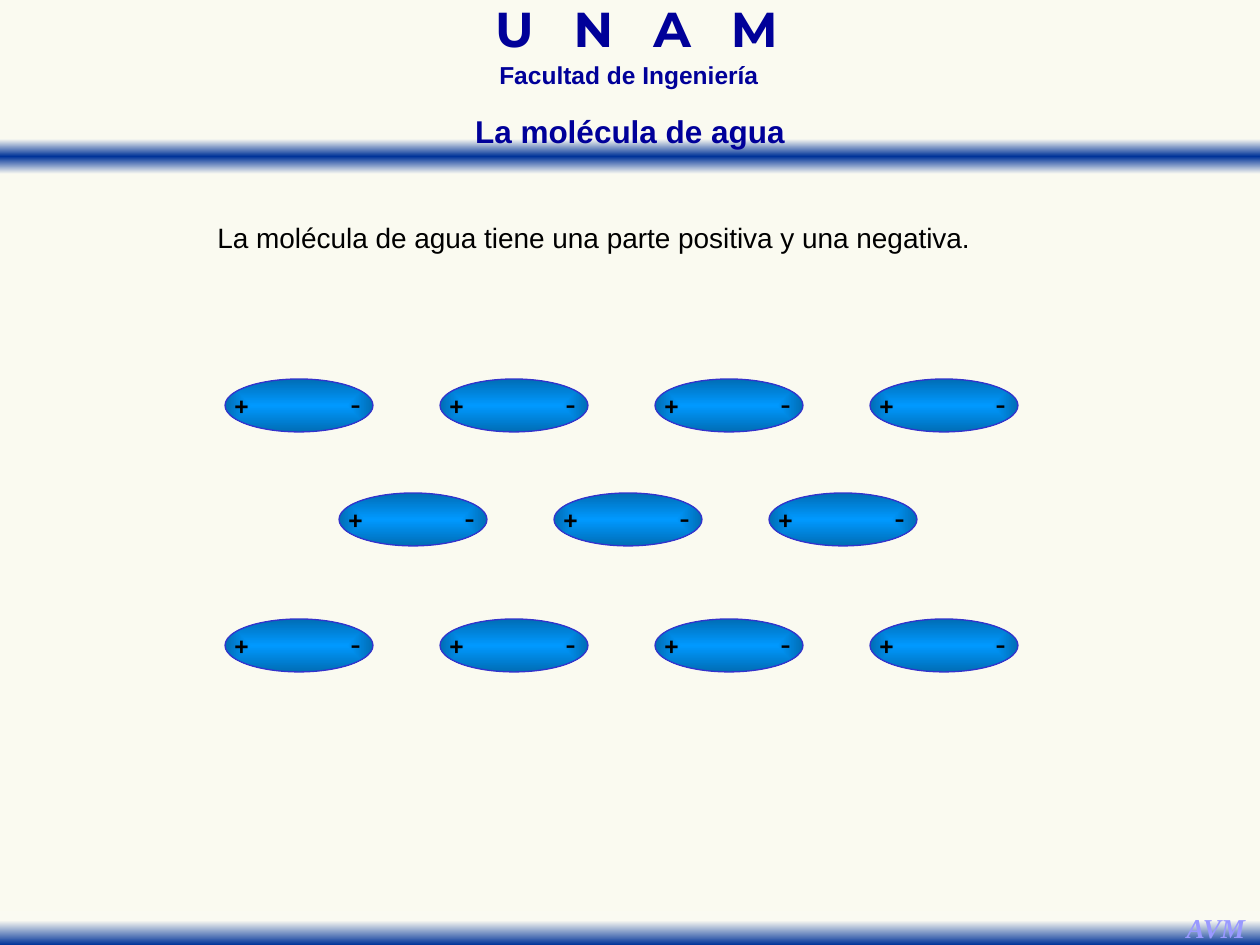
from dataclasses import dataclass
from typing import Any

from lxml import etree
from pptx import Presentation
from pptx.dml.color import RGBColor as Rgb
from pptx.enum.shapes import MSO_SHAPE as Kind
from pptx.enum.text import MSO_AUTO_SIZE as Fit, PP_ALIGN as Align
from pptx.oxml.ns import qn
from pptx.util import Emu, Pt

SCALE = 914400 / 126
CREAM, NAVY, BLUE = "FAFAF2", "000099", "003399"
LINEAR = '<a:lin ang="5400000" scaled="1"/>'
RADIAL = ('<a:path path="shape"><a:fillToRect l="50000" t="50000" '
          'r="50000" b="50000"/></a:path>')


@dataclass
class Box:
    x: int
    y: int
    w: int
    h: int


@dataclass
class Label:
    text: str
    box: Box
    size: float
    color: str = "000000"
    font: str = "Arial"
    bold: bool = False
    slant: bool = False
    wrap: bool = True
    align: Any = Align.CENTER
    lead: float = 1.0
    indent: int = 0
    track: int = 0


@dataclass
class Row:
    x: int
    y: int
    count: int


def px(n: int) -> Emu:
    return Emu(round(n * SCALE))


def place(box: Box) -> tuple:
    return px(box.x), px(box.y), px(box.w), px(box.h)


def tint(code: str) -> Rgb:
    return Rgb.from_string(code)


def blend(shape: Any, stops: list, mode: str) -> None:
    shape.fill.solid()
    marks = "".join(f'<a:gs pos="{pos * 1000}"><a:srgbClr val="{code}"/></a:gs>'
                    for pos, code in stops)
    grad = etree.fromstring(
        '<a:gradFill xmlns:a="http://schemas.openxmlformats.org/drawingml/2006/main" '
        f'rotWithShape="1"><a:gsLst>{marks}</a:gsLst>{mode}</a:gradFill>')
    props = shape._element.spPr
    props.replace(props.find(qn("a:solidFill")), grad)


def draw_band(shapes: Any, box: Box, stops: list) -> None:
    band = shapes.add_shape(Kind.RECTANGLE, *place(box))
    band.shadow.inherit = False
    band.line.fill.background()
    blend(band, stops, LINEAR)


def write(shapes: Any, label: Label) -> None:
    frame = shapes.add_textbox(*place(label.box)).text_frame
    frame.word_wrap = label.wrap
    frame.auto_size = Fit.SHAPE_TO_FIT_TEXT
    frame.text = label.text
    para = frame.paragraphs[0]
    para.alignment = label.align
    para.line_spacing = label.lead
    if label.indent:
        props = para._p.get_or_add_pPr()
        props.set("marL", str(px(label.indent)))
        props.set("indent", "0")
    for run in para.runs:
        font = run.font
        font.name, font.size = label.font, Pt(label.size)
        font.bold, font.italic = label.bold, label.slant
        font.color.rgb = tint(label.color)
        if label.track:
            run._r.get_or_add_rPr().set("spc", str(label.track))


def draw_water(shapes: Any, x: int, y: int) -> None:
    parts = shapes.add_group_shape().shapes
    oval = parts.add_shape(Kind.OVAL, *place(Box(x, y, 148, 53)))
    oval.shadow.inherit = False
    blend(oval, [(0, "0099FF"), (100, "006DB5")], RADIAL)
    oval.line.color.rgb = tint("3333CC")
    oval.line.width = Pt(0.75)
    write(parts, Label("+", Box(x - 3, y + 6, 39, 42), 14, bold=True, wrap=False))
    write(parts, Label("-", Box(x + 113, y - 1, 35, 50), 18, wrap=False))


HEADS = [
    Label("U N A M", Box(390, 8, 493, 54), 28, NAVY, "Montserrat", True,
          lead=0.7, track=750),
    Label("Facultad de Ingeniería", Box(404, 62, 450, 34), 14, NAVY,
          bold=True, lead=0.7),
]
MARK = Label("AVM", Box(1173, 905, 86, 47), 15.6, "9999FF", "Times New Roman",
             True, True, False)
BODY = Label("La molécula de agua tiene una parte positiva y una negativa.",
             Box(179, 204, 872, 52), 16, align=Align.JUSTIFY, lead=1.3, indent=26)
TITLE = Label("La molécula de agua", Box(357, 106, 546, 50), 18, NAVY, bold=True)
ROWS = [Row(225, 379, 4), Row(339, 493, 3), Row(225, 619, 4)]
STEP = 215


def main() -> None:
    deck = Presentation()
    deck.slide_width, deck.slide_height = px(1260), px(945)
    slide = deck.slides.add_slide(deck.slide_layouts[6])
    back = slide.background.fill
    back.solid()
    back.fore_color.rgb = tint("FAFAF0")
    shapes = slide.shapes
    draw_band(shapes, Box(0, 139, 1260, 35), [(0, CREAM), (50, BLUE), (100, CREAM)])
    for head in HEADS:
        write(shapes, head)
    draw_band(shapes, Box(0, 911, 1260, 34), [(28, CREAM), (100, BLUE)])
    write(shapes, MARK)
    write(shapes, BODY)
    for row in ROWS:
        for col in range(row.count):
            draw_water(shapes, row.x + col * STEP, row.y)
    write(shapes, TITLE)
    deck.save("out.pptx")


if __name__ == "__main__":
    main()
